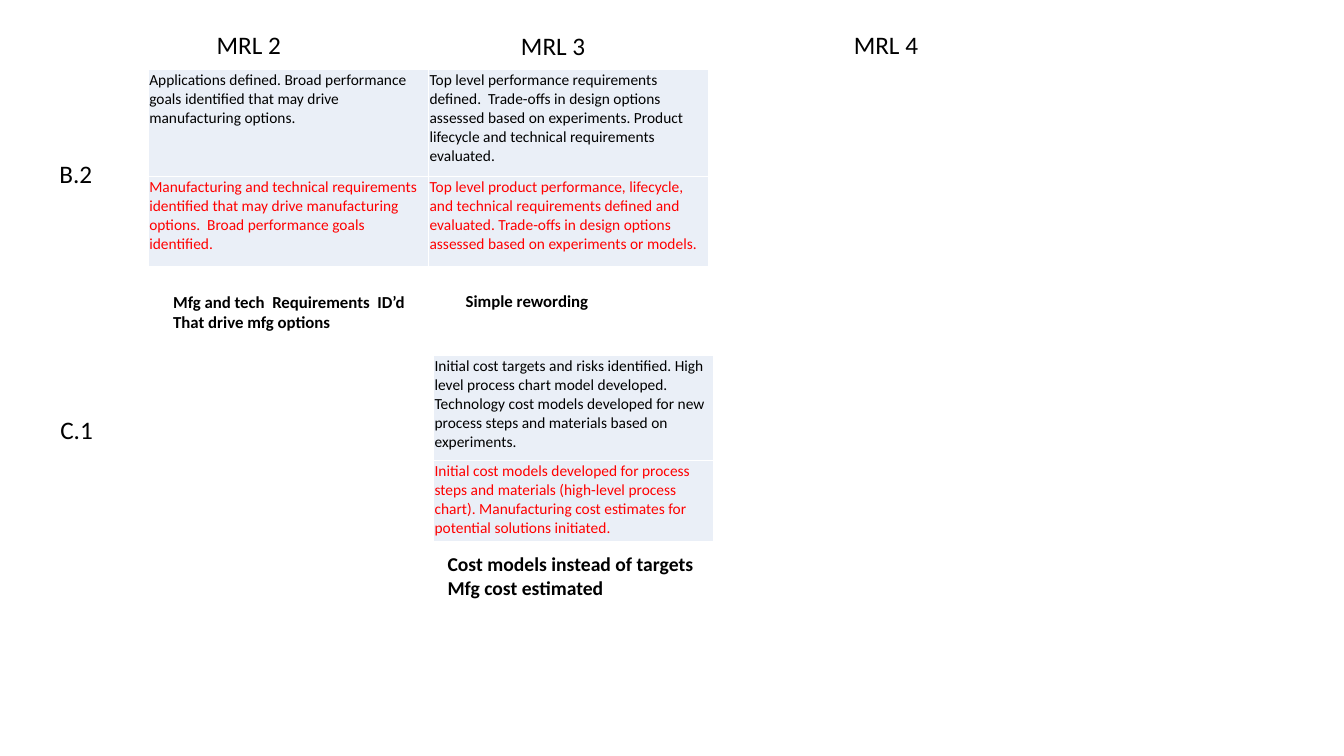
from dataclasses import dataclass

from pptx import Presentation
from pptx.dml.color import RGBColor as Rgb
from pptx.enum.text import MSO_AUTO_SIZE as Fit
from pptx.util import Inches, Pt

WIDE, HIGH = Inches(13.33), Inches(7.5)
BLACK, RED, PALE = "000000", "FF0000", "EAEFF7"
COL = 20.86  # width of a table column, percent of the slide


@dataclass
class Label:
    text: str
    left: float
    top: float
    width: float
    height: float
    size: int = 18
    bold: bool = False


@dataclass
class Grid:
    left: float
    top: float
    rows: list[float]
    cells: list[list[str]]


def across(share: float) -> int:
    return round(WIDE * share / 100)


def down(share: float) -> int:
    return round(HIGH * share / 100)


def color(code: str) -> Rgb:
    return Rgb.from_string(code)


def style(frame, size: int, code: str, bold: bool = False) -> None:
    for para in frame.paragraphs:
        for run in para.runs:
            font = run.font
            font.name, font.size, font.bold = "Calibri", Pt(size), bold
            font.color.rgb = color(code)


def draw_label(slide, item: Label) -> None:
    box = slide.shapes.add_textbox(across(item.left), down(item.top),
                                   across(item.width), down(item.height))
    frame = box.text_frame
    frame.text = item.text
    frame.word_wrap = False
    frame.auto_size = Fit.SHAPE_TO_FIT_TEXT
    style(frame, item.size, BLACK, item.bold)


def draw_grid(slide, item: Grid) -> None:
    count = len(item.cells[0])
    table = slide.shapes.add_table(
        len(item.rows), count, across(item.left), down(item.top),
        across(COL * count), down(sum(item.rows))).table
    table.first_row = table.horz_banding = False
    for col in table.columns:
        col.width = across(COL)
    # The first row holds the old wording, the second the new one in red
    for row, (share, texts, ink) in enumerate(
            zip(item.rows, item.cells, (BLACK, RED))):
        table.rows[row].height = down(share)
        for col, text in enumerate(texts):
            cell = table.cell(row, col)
            cell.margin_left = cell.margin_right = Inches(0.01)
            cell.margin_top, cell.margin_bottom = Inches(0.01), 0
            cell.fill.solid()
            cell.fill.fore_color.rgb = color(PALE)
            cell.text_frame.text = text
            style(cell.text_frame, 11, ink)


LABELS = [
    # Column heads
    Label("MRL 2", 15.38, 3.2, 6.38, 5.33),
    Label("MRL 3", 38.03, 3.33, 6.38, 5.33),
    Label("MRL 4", 62.79, 3.2, 6.38, 5.33),
    # Row heads
    Label("B.2", 3.68, 20.27, 3.98, 5.33),
    Label("C.1", 3.75, 54.13, 3.98, 5.33),
    # Remarks below the tables
    Label("Mfg and tech  Requirements  ID’d\nThat drive mfg options",
          12.15, 37.87, 18.98, 6.67, 12, True),
    Label("Simple rewording", 33.91, 37.87, 10.8, 4, 12, True),
    Label("Cost models instead of targets\nMfg cost estimated",
          32.56, 72.4, 19.95, 7.6, 14, True),
]

GRIDS = [
    Grid(11.03, 9.2, [14.13, 12], [
        ["Applications defined. Broad performance goals identified that may "
         "drive manufacturing options.",
         "Top level performance requirements defined.  Trade-offs in design "
         "options assessed based on experiments. Product lifecycle and "
         "technical requirements evaluated."],
        ["Manufacturing and technical requirements identified that may drive "
         "manufacturing options.  Broad performance goals identified.",
         "Top level product performance, lifecycle, and technical "
         "requirements defined and evaluated. Trade-offs in design options "
         "assessed based on experiments or models."],
    ]),
    Grid(32.26, 47.07, [13.87, 10.67], [
        ["Initial cost targets and risks identified. High level process "
         "chart model developed. Technology cost models developed for new "
         "process steps and materials based on experiments."],
        ["Initial cost models developed for process steps and materials "
         "(high-level process chart). Manufacturing cost estimates for "
         "potential solutions initiated."],
    ]),
]


def main() -> None:
    deck = Presentation()
    deck.slide_width, deck.slide_height = WIDE, HIGH
    slide = deck.slides.add_slide(deck.slide_layouts[6])
    for label in LABELS:
        draw_label(slide, label)
    for grid in GRIDS:
        draw_grid(slide, grid)
    deck.save("out.pptx")


if __name__ == "__main__":
    main()
